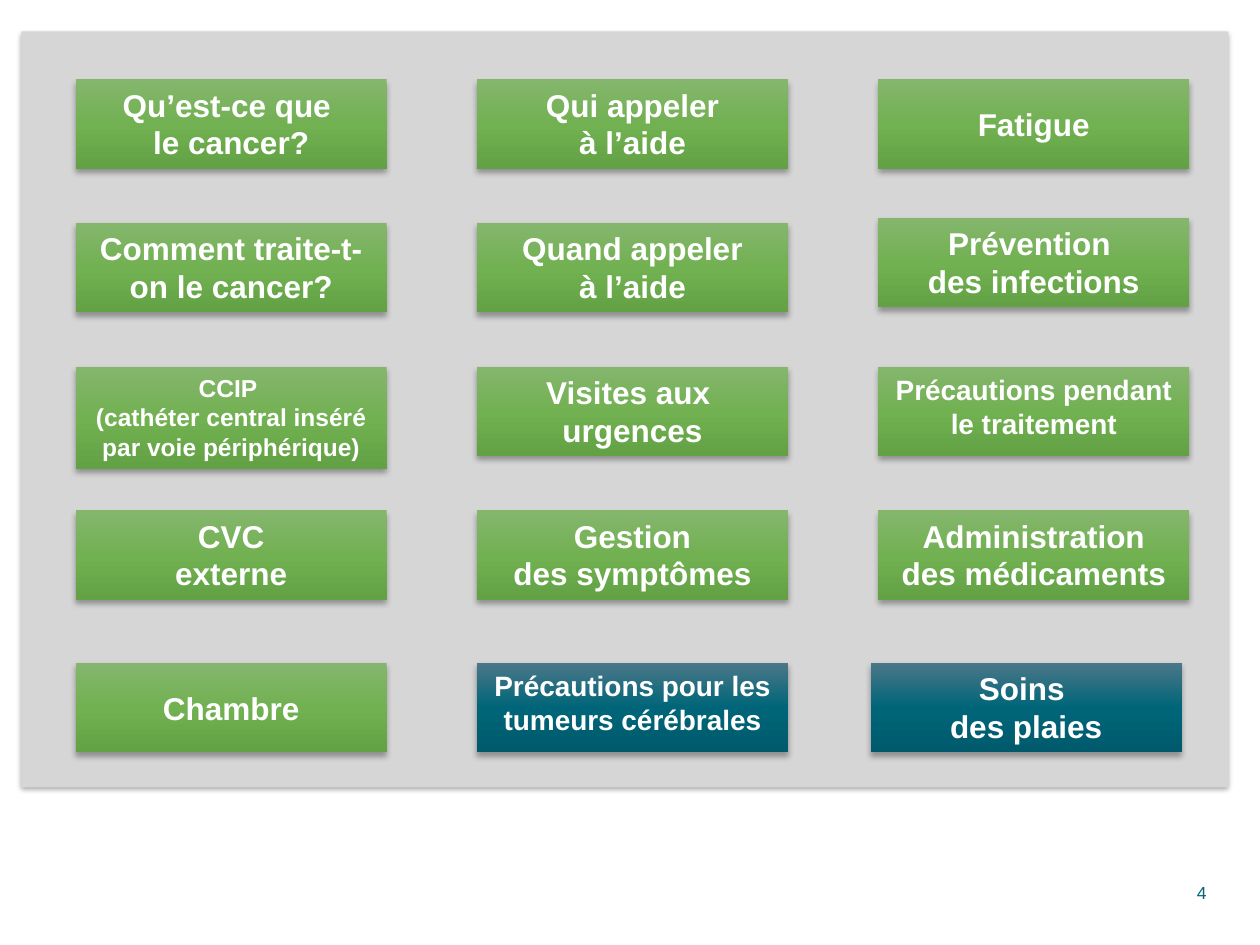
from dataclasses import dataclass

from lxml.etree import SubElement as Sub
from pptx import Presentation
from pptx.dml.color import RGBColor as RGB
from pptx.enum.shapes import MSO_SHAPE as Shape
from pptx.enum.text import MSO_ANCHOR as Anchor, MSO_AUTO_SIZE as Fit, PP_ALIGN as Align
from pptx.oxml.ns import qn
from pptx.util import Inches, Pt


@dataclass(frozen=True)
class Theme:
    font: str = "Arial"
    panel: str = "D6D6D6"
    ink: str = "FFFFFF"
    accent: str = "006579"
    shade: str = "000000"
    green: tuple = ("84B66D", "72B152", "63A244")
    teal: tuple = ("4B7888", "006579", "005A6C")
    large: int = 18
    medium: int = 16
    small: int = 14
    tiny: int = 10


def write(frame, text, *, font, size, color, bold=False, align=Align.LEFT,
          anchor=Anchor.TOP, wrap=True, fit=Fit.SHAPE_TO_FIT_TEXT):
    frame.text = text
    frame.word_wrap = wrap
    frame.auto_size = fit
    frame.vertical_anchor = anchor
    for para in frame.paragraphs:
        para.alignment = align
        para.font.name = font
        para.font.size = Pt(size)
        para.font.bold = bold
        para.font.color.rgb = RGB.from_string(color)


class Board:
    """Draws topic tiles on a grid with one shared style."""

    left, top, wide, high = 0.6, 0.63, 2.47, 0.71
    step_x, step_y = 3.185, 1.14

    def __init__(self, theme):
        self.theme = theme
        self.deck = Presentation()
        self.deck.slide_width, self.deck.slide_height = Inches(10), Inches(7.5)
        self.slide = self.deck.slides.add_slide(self.deck.slide_layouts[6])

    def rect(self, x, y, wide, high, blur, dist, alpha):
        box = self.slide.shapes.add_shape(
            Shape.RECTANGLE, Inches(x), Inches(y), Inches(wide), Inches(high))
        box.line.fill.background()
        box.shadow.inherit = False
        effects = box.element.spPr.find(qn("a:effectLst"))
        shadow = Sub(effects, qn("a:outerShdw"), blurRad=str(Pt(blur)),
                     dist=str(Pt(dist)), dir="5400000", rotWithShape="0")
        color = Sub(shadow, qn("a:srgbClr"), val=self.theme.shade)
        Sub(color, qn("a:alpha"), val=str(alpha * 1000))
        return box

    def panel(self, x, y, wide, high):
        box = self.rect(x, y, wide, high, blur=3.1, dist=1.8, alpha=35)
        box.fill.solid()
        box.fill.fore_color.rgb = RGB.from_string(self.theme.panel)

    def blend(self, box, colors):
        box.fill.gradient()
        box.fill.gradient_angle = 270
        stops = box.element.spPr.find(".//" + qn("a:gsLst"))
        for stop in list(stops):
            stops.remove(stop)
        for share, color in zip((0, 50, 100), colors):
            stop = Sub(stops, qn("a:gs"), pos=str(share * 1000))
            Sub(stop, qn("a:srgbClr"), val=color)

    def tile(self, col, row, text, *, size=None, colors=None, high=high,
             dx=0, dy=0, anchor=Anchor.TOP):
        box = self.rect(self.left + col * self.step_x + dx,
                        self.top + row * self.step_y + dy,
                        self.wide, high, blur=3.5, dist=2.2, alpha=32)
        self.blend(box, colors or self.theme.green)
        write(box.text_frame, text, font=self.theme.font,
              size=size or self.theme.large, color=self.theme.ink,
              bold=True, align=Align.CENTER, anchor=anchor)

    def number(self, x, y, side, text):
        box = self.slide.shapes.add_textbox(
            Inches(x), Inches(y), Inches(side), Inches(side))
        frame = box.text_frame
        frame.margin_left = frame.margin_right = 0
        frame.margin_top = frame.margin_bottom = 0
        write(frame, text, font=self.theme.font, size=self.theme.tiny,
              color=self.theme.accent, wrap=False)


def main():
    theme = Theme()
    board = Board(theme)
    last = 0.07
    mid = {"anchor": Anchor.MIDDLE}
    medium = {"size": theme.medium}
    teal = {"colors": theme.teal}
    rows = [
        [("Qu’est-ce que \nle cancer?", {}),
         ("Qui appeler\nà l’aide", {}),
         ("Fatigue", mid)],
        [("Comment traite-t-on le cancer?", {}),
         ("Quand appeler\nà l’aide", {}),
         ("Prévention \ndes infections", {"dy": -0.04})],
        [("CCIP \n(cathéter central inséré par voie périphérique)",
          {"size": theme.small, "high": 0.81}),
         ("Visites aux \vurgences", {}),
         ("Précautions pendant le traitement", medium)],
        [("CVC\nexterne", {}),
         ("Gestion\ndes symptômes", {}),
         ("Administration\ndes médicaments", {})],
        [("Chambre", {"dy": last, **mid}),
         ("Précautions pour les tumeurs cérébrales", {"dy": last, **medium, **teal}),
         ("Soins \ndes plaies", {"dx": -0.06, "dy": last, **teal})],
    ]
    board.panel(0.17, 0.25, 9.58, 6)
    for row, tiles in enumerate(rows):
        for col, (text, style) in enumerate(tiles):
            board.tile(col, row, text, **style)
    board.number(9.5, 7, 0.17, "4")
    board.deck.save("out.pptx")


if __name__ == "__main__":
    main()
